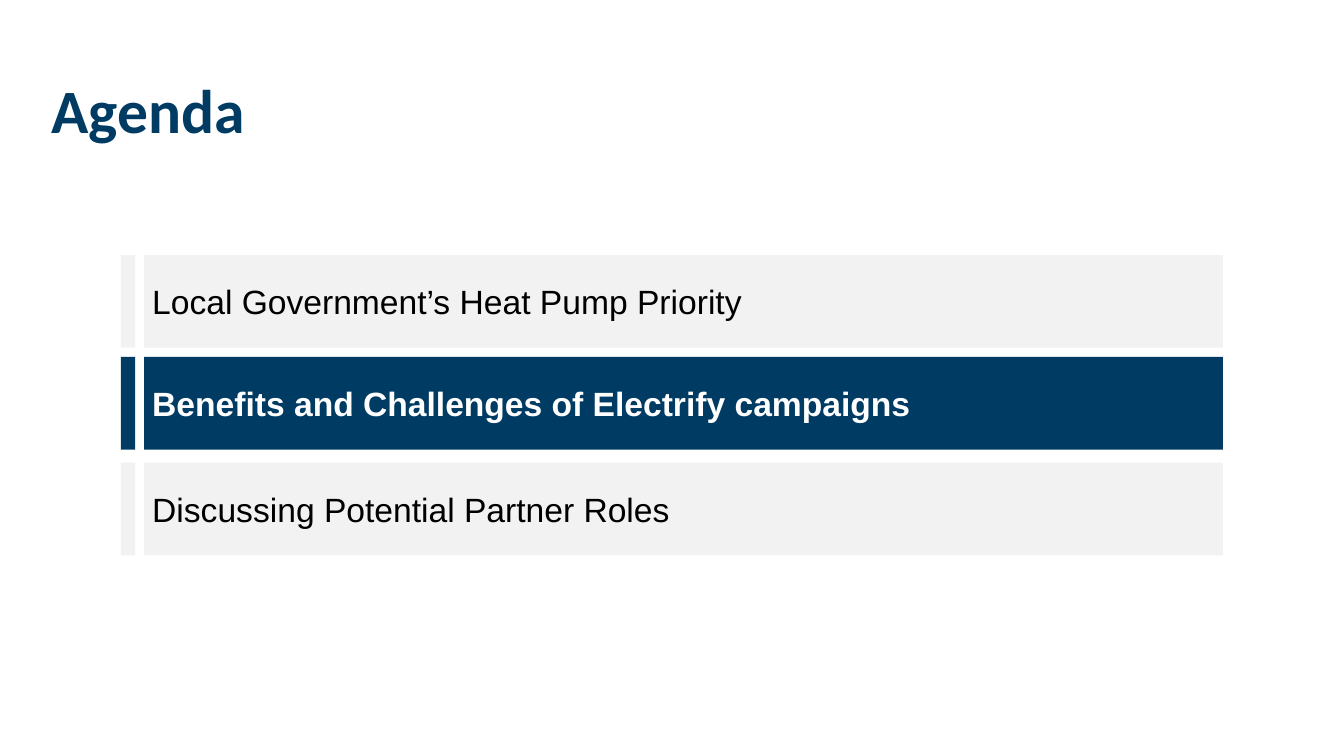
from pptx import Presentation
from pptx import util as u
from pptx.dml.color import RGBColor
from pptx.enum import shapes, text

NAVY = RGBColor(0x00, 0x3B, 0x63)
GREY = RGBColor(0xF2, 0xF2, 0xF2)
WHITE = RGBColor(0xFF, 0xFF, 0xFF)
BLACK = RGBColor(0x00, 0x00, 0x00)

# Columns as (left, width), rows as (top, wording, is current), in inches
MARKER_COLUMN = (1.2, 0.14)
TOPIC_COLUMN = (1.43, 10.7)
ROW_HEIGHT = 0.92
AGENDA = [
    (2.53, "Local Government’s Heat Pump Priority", False),
    (3.54, "Benefits and Challenges of Electrify campaigns", True),
    (4.59, "Discussing Potential Partner Roles", False),
]


def add_bar(group, column, top, color):
    left, width = column
    bar = group.shapes.add_shape(
        shapes.MSO_SHAPE.RECTANGLE,
        *(u.Inches(length) for length in (left, top, width, ROW_HEIGHT)))
    bar.shadow.inherit = False
    bar.fill.solid()
    bar.fill.fore_color.rgb = color
    bar.line.fill.background()
    return bar


def write(frame, wording, color, **font_format):
    frame.word_wrap = True
    frame.vertical_anchor = text.MSO_ANCHOR.MIDDLE
    para = frame.paragraphs[0]
    para.alignment = text.PP_ALIGN.LEFT
    span = para.add_run()
    span.text = wording
    span.font.color.rgb = color
    for name, value in font_format.items():
        setattr(span.font, name, value)
    return para


deck = Presentation()
deck.slide_width, deck.slide_height = u.Inches(13.33), u.Inches(7.5)
page = deck.slides.add_slide(deck.slide_layouts[5])

title = page.shapes.title
title_place = {"left": 0.41, "top": 0.4, "width": 12.53, "height": 1.45}
for side, length in title_place.items():
    setattr(title, side, u.Inches(length))
heading = write(title.text_frame, "Agenda", NAVY,
                name="Calibri", size=u.Pt(44), bold=True)
heading.line_spacing = 0.9

insets = {"margin_left": 0.08, "margin_top": 0, "margin_right": 0.08, "margin_bottom": 0}
for top, topic, current in AGENDA:
    fill, ink = (NAVY, WHITE) if current else (GREY, BLACK)
    row = page.shapes.add_group_shape()
    add_bar(row, MARKER_COLUMN, top, fill)
    frame = add_bar(row, TOPIC_COLUMN, top, fill).text_frame
    for side, length in insets.items():
        setattr(frame, side, u.Inches(length))
    write(frame, topic, ink, name="Arial", size=u.Pt(24), bold=current)

deck.save("out.pptx")
